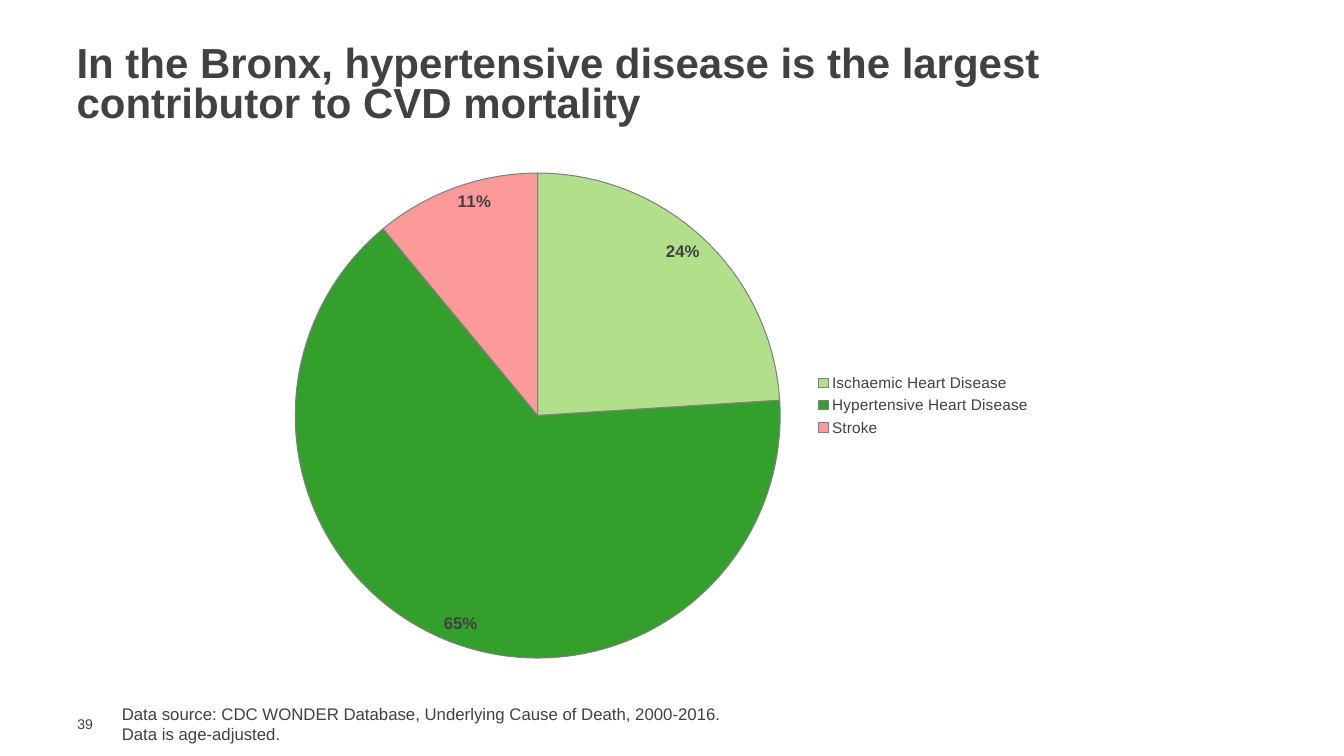
from dataclasses import dataclass

from lxml.etree import SubElement
from pptx import Presentation
from pptx.chart.data import CategoryChartData
from pptx.dml.color import RGBColor
from pptx.enum.chart import XL_CHART_TYPE, XL_LABEL_POSITION, XL_LEGEND_POSITION
from pptx.enum.text import MSO_ANCHOR, PP_ALIGN
from pptx.oxml.ns import qn
from pptx.util import Pt

COLOURS = {
    "text": "414042",
    "outline": "808080",
    "ischaemic": "B2DF8A",
    "hypertensive": "33A02C",
    "stroke": "FB9A99",
}
FONT = "Arial"


@dataclass(frozen=True)
class Area:
    """Left, top, width and height: points on the page, fractions in a chart."""

    left: float
    top: float
    width: float
    height: float


@dataclass(frozen=True)
class Cause:
    name: str
    share: float
    colour: str


@dataclass(frozen=True)
class Note:
    area: Area
    lines: tuple[str, ...]
    size: float
    anchor: MSO_ANCHOR
    insets: tuple[float, float, float, float]


TITLE = "In the Bronx, hypertensive disease is the largest contributor to CVD mortality"
TITLE_AREA = Area(47.5, 28.8, 864, 65.5)
CHART_AREA = Area(151.2, 113.8, 627.8, 365.8)
PIE_AREA = Area(0.095, 0.027, 0.552, 0.947)
LEGEND_AREA = Area(0.685, 0.41, 0.25, 0.14)

CAUSES = (
    Cause("Ischaemic Heart Disease", 0.24, "ischaemic"),
    Cause("Hypertensive Heart Disease", 0.65, "hypertensive"),
    Cause("Stroke", 0.11, "stroke"),
)
NOTES = (
    Note(Area(48.2, 511.2, 31, 12.2), ("39",), 10, MSO_ANCHOR.MIDDLE, (7.2, 0, 0, 0)),
    Note(
        Area(79.9, 499, 699.1, 36),
        (
            "Data source: CDC WONDER Database, Underlying Cause of Death, 2000-2016.",
            "Data is age-adjusted.",
        ),
        12,
        MSO_ANCHOR.TOP,
        (7.2, 3.6, 7.2, 3.6),
    ),
)


def colour(name: str) -> RGBColor:
    return RGBColor.from_string(COLOURS[name])


def style_font(font, size: float, bold: bool = False) -> None:
    font.name = FONT
    font.size = Pt(size)
    font.bold = bold
    font.color.rgb = colour("text")


def bounds(area: Area) -> tuple[Pt, Pt, Pt, Pt]:
    return Pt(area.left), Pt(area.top), Pt(area.width), Pt(area.height)


def fill_title(page) -> None:
    title = page.shapes.title
    title.left, title.top, title.width, title.height = bounds(TITLE_AREA)
    frame = title.text_frame
    frame.word_wrap = True
    frame.vertical_anchor = MSO_ANCHOR.MIDDLE
    para = frame.paragraphs[0]
    para.alignment = PP_ALIGN.LEFT
    para.line_spacing = 0.8
    para.space_before = Pt(0)
    span = para.add_run()
    span.text = TITLE
    style_font(span.font, 30, bold=True)


def add_note(page, note: Note) -> None:
    frame = page.shapes.add_textbox(*bounds(note.area)).text_frame
    frame.word_wrap = True
    frame.vertical_anchor = note.anchor
    (frame.margin_left, frame.margin_top,
     frame.margin_right, frame.margin_bottom) = map(Pt, note.insets)
    for index, line in enumerate(note.lines):
        para = frame.add_paragraph() if index else frame.paragraphs[0]
        span = para.add_run()
        span.text = line
        style_font(span.font, note.size)


def set_layout(layout, area: Area, inner: bool = False) -> None:
    """Fix a chart part to an area given in fractions of the chart."""
    for child in list(layout):
        layout.remove(child)
    manual = SubElement(layout, qn("c:manualLayout"))
    settings = {"layoutTarget": "inner"} if inner else {}
    settings |= {"xMode": "edge", "yMode": "edge", "x": area.left,
                 "y": area.top, "w": area.width, "h": area.height}
    for tag, value in settings.items():
        SubElement(manual, qn(f"c:{tag}")).set("val", str(value))


def add_pie(page) -> None:
    data = CategoryChartData(number_format="0%")
    data.categories = [cause.name for cause in CAUSES]
    data.add_series("Series 1", [cause.share for cause in CAUSES])
    chart = page.shapes.add_chart(XL_CHART_TYPE.PIE, *bounds(CHART_AREA), data).chart
    style_font(chart.font, 18)
    chart.has_title = False

    plot = chart.plots[0]
    plot.vary_by_categories = True
    for index, cause in enumerate(CAUSES):
        form = plot.series[0].points[index].format
        form.fill.solid()
        form.fill.fore_color.rgb = colour(cause.colour)
        form.line.color.rgb = colour("outline")
        form.line.width = Pt(0.75)

    plot.has_data_labels = True
    labels = plot.data_labels
    labels.show_value = True
    labels.show_percentage = False
    labels.number_format = "0%"
    labels.number_format_is_linked = False
    labels.position = XL_LABEL_POSITION.INSIDE_END
    style_font(labels.font, 12, bold=True)

    chart.has_legend = True
    legend = chart.legend
    legend.position = XL_LEGEND_POSITION.RIGHT
    legend.include_in_layout = False
    style_font(legend.font, 11)

    plot_area = chart.element.chart.plotArea
    set_layout(plot_area.get_or_add_layout() if hasattr(plot_area, "get_or_add_layout")
               else first_layout(plot_area, 0), PIE_AREA, inner=True)
    set_layout(first_layout(legend.element if hasattr(legend, "element")
                            else chart.element.chart.find(qn("c:legend")), 1), LEGEND_AREA)


def first_layout(parent, index: int):
    """Return the layout element of a chart part, adding it at index if missing."""
    layout = parent.find(qn("c:layout"))
    if layout is None:
        layout = SubElement(parent, qn("c:layout"))
        parent.insert(index, layout)
    return layout


def main() -> None:
    deck = Presentation()
    deck.slide_width, deck.slide_height = Pt(960), Pt(540)
    page = deck.slides.add_slide(deck.slide_layouts[5])
    fill_title(page)
    for note in NOTES:
        add_note(page, note)
    add_pie(page)
    deck.save("out.pptx")


if __name__ == "__main__":
    main()
